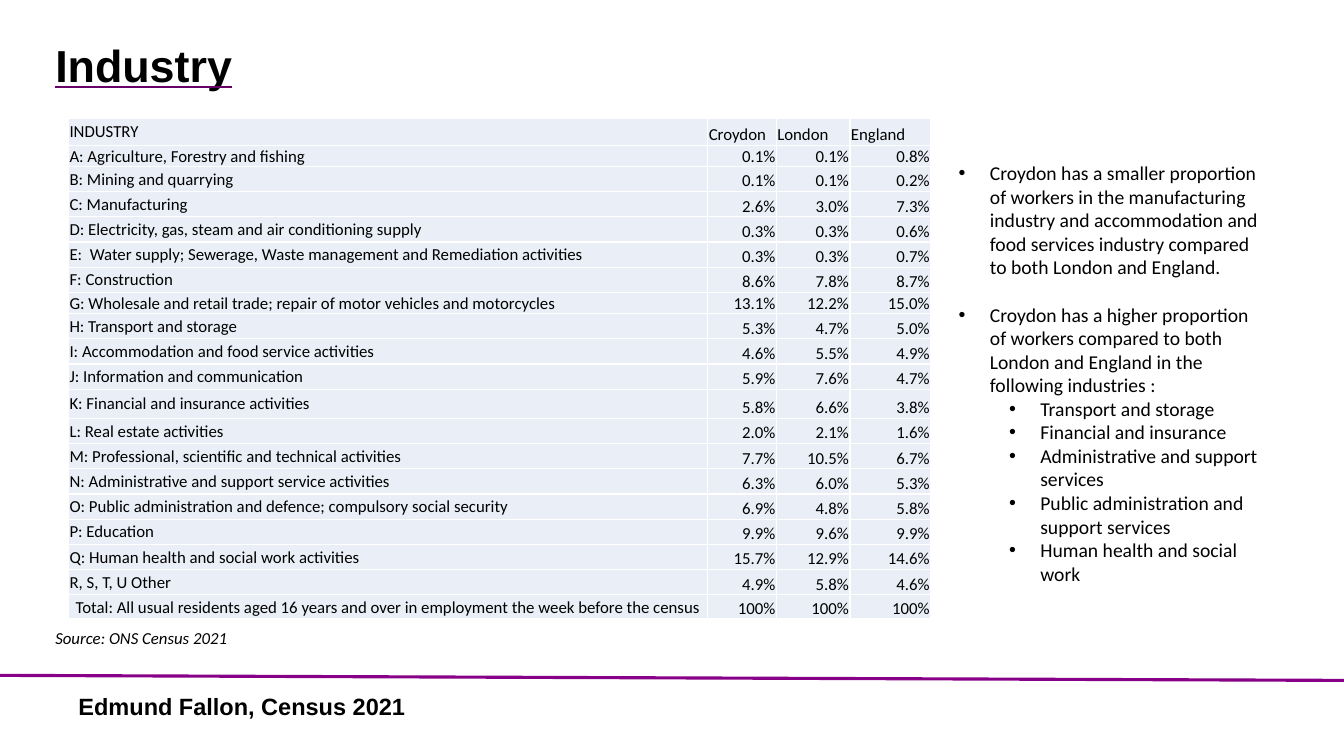
from lxml.etree import SubElement
from pptx import Presentation
from pptx.dml.color import RGBColor
from pptx.enum.shapes import MSO_CONNECTOR
from pptx.enum.text import MSO_ANCHOR as Anchor, PP_ALIGN as Align
from pptx.oxml import parse_xml
from pptx.oxml.ns import nsdecls, qn
from pptx.util import Inches, Pt

BLACK, PURPLE, UNDERLINE = "000000", "880088", "660066"
CELL_FILL, CELL_BORDER = "EAEFF7", "FFFFFF"


def rgb(value):
    return RGBColor.from_string(value)


def add_run(paragraph, text, size, font="Calibri"):
    run = paragraph.add_run()
    run.text = text
    run.font.size = Pt(size)
    run.font.name = font
    run.font.color.rgb = rgb(BLACK)
    return run


prs = Presentation()
prs.slide_width, prs.slide_height = Inches(13.33), Inches(7.5)
slide = prs.slides.add_slide(prs.slide_layouts[6])
shapes = slide.shapes

# Footer rule and text
rule = shapes.add_connector(
    MSO_CONNECTOR.STRAIGHT, Inches(0), Inches(6.7), Inches(13.33), Inches(6.75))
rule.line.color.rgb = rgb(PURPLE)
rule.line.width = Pt(2.25)
SubElement(rule._element.spPr, qn("a:effectLst"))

footer = shapes.add_textbox(Inches(0.68), Inches(6.89), Inches(3.87), Inches(0.47)).text_frame
footer.word_wrap = True
footer.paragraphs[0].line_spacing = 0.7
add_run(footer.paragraphs[0], "Edmund Fallon, Census 2021", 16.8, "Arial").font.bold = True

# Title with a purple underline
title = shapes.add_textbox(Inches(0.45), Inches(0.21), Inches(11.5), Inches(0.92)).text_frame
title.word_wrap = True
title.vertical_anchor = Anchor.MIDDLE
title.paragraphs[0].line_spacing = 0.9
heading = add_run(title.paragraphs[0], "Industry", 32, "Arial")
heading.font.bold = True
heading.font.underline = True
heading._r.rPr.find(qn("a:latin")).addprevious(parse_xml(
    f'<a:uFill {nsdecls("a")}><a:solidFill><a:srgbClr val="{UNDERLINE}"/></a:solidFill></a:uFill>'))

# Source line
source = shapes.add_textbox(Inches(0.45), Inches(6.18), Inches(2.18), Inches(0.3)).text_frame
source.word_wrap = True
add_run(source.paragraphs[0], "Source: ONS Census 2021", 12).font.italic = True

# Findings
findings = [
    (0, "Croydon has a smaller proportion of workers in the manufacturing industry and "
        "accommodation and food services industry compared to both London and England."),
    (0, "Croydon has a higher proportion of workers compared to both London and England "
        "in the following industries :"),
    (1, "Transport and storage"),
    (1, "Financial and insurance"),
    (1, "Administrative and support services"),
    (1, "Public administration and support services"),
    (1, "Human health and social work"),
]
notes = shapes.add_textbox(Inches(9.41), Inches(1.55), Inches(3.19), Inches(4.34)).text_frame
notes.word_wrap = True
for index, (level, finding) in enumerate(findings):
    paragraph = notes.paragraphs[0] if index == 0 else notes.add_paragraph()
    paragraph.level = level
    pPr = paragraph._p.get_or_add_pPr()
    pPr.set("marL", str(Inches(0.31 + 0.5 * level)))
    pPr.set("indent", str(Inches(-0.31)))
    SubElement(pPr, qn("a:buFont"), typeface="Arial")
    SubElement(pPr, qn("a:buChar"), char="•")
    if index and level == 0:
        paragraph.space_before = Pt(17)
    add_run(paragraph, finding, 14)

# Industry table
industries = [
    ("INDUSTRY", "Croydon", "London", "England"),
    ("A: Agriculture, Forestry and fishing", "0.1%", "0.1%", "0.8%"),
    ("B: Mining and quarrying", "0.1%", "0.1%", "0.2%"),
    ("C: Manufacturing", "2.6%", "3.0%", "7.3%"),
    ("D: Electricity, gas, steam and air conditioning supply", "0.3%", "0.3%", "0.6%"),
    ("E:  Water supply; Sewerage, Waste management and Remediation activities",
     "0.3%", "0.3%", "0.7%"),
    ("F: Construction", "8.6%", "7.8%", "8.7%"),
    ("G: Wholesale and retail trade; repair of motor vehicles and motorcycles",
     "13.1%", "12.2%", "15.0%"),
    ("H: Transport and storage", "5.3%", "4.7%", "5.0%"),
    ("I: Accommodation and food service activities", "4.6%", "5.5%", "4.9%"),
    ("J: Information and communication", "5.9%", "7.6%", "4.7%"),
    ("K: Financial and insurance activities", "5.8%", "6.6%", "3.8%"),
    ("L: Real estate activities", "2.0%", "2.1%", "1.6%"),
    ("M: Professional, scientific and technical activities", "7.7%", "10.5%", "6.7%"),
    ("N: Administrative and support service activities", "6.3%", "6.0%", "5.3%"),
    ("O: Public administration and defence; compulsory social security",
     "6.9%", "4.8%", "5.8%"),
    ("P: Education", "9.9%", "9.6%", "9.9%"),
    ("Q: Human health and social work activities", "15.7%", "12.9%", "14.6%"),
    ("R, S, T, U Other", "4.9%", "5.8%", "4.6%"),
    ("Total: All usual residents aged 16 years and over in employment the week before the census",
     "100%", "100%", "100%"),
]
column_widths = [6.34, 0.68, 0.73, 0.8]
special_heights = {0: 0.27, 1: 0.21, 7: 0.21, 11: 0.29, 19: 0.24}
last_row = len(industries) - 1

table = shapes.add_table(len(industries), len(column_widths), Inches(0.68), Inches(1.17),
                         Inches(8.55), Inches(4.97)).table
table.first_row = False
table.horz_banding = False
for column, width in zip(table.columns, column_widths):
    column.width = Inches(width)

for row, values in enumerate(industries):
    table.rows[row].height = Inches(special_heights.get(row, 0.25))
    for col, value in enumerate(values):
        cell = table.cell(row, col)
        cell.margin_left = cell.margin_right = cell.margin_top = Inches(0.01)
        cell.margin_bottom = 0
        cell.vertical_anchor = Anchor.BOTTOM if col else Anchor.MIDDLE
        tcPr = cell._tc.get_or_add_tcPr()
        for side in ("lnL", "lnR", "lnT", "lnB"):
            border = SubElement(tcPr, qn(f"a:{side}"), w=str(Pt(1)))
            SubElement(SubElement(border, qn("a:solidFill")), qn("a:srgbClr"), val=CELL_BORDER)
        cell.fill.solid()
        cell.fill.fore_color.rgb = rgb(CELL_FILL)
        paragraph = cell.text_frame.paragraphs[0]
        if col and row:
            paragraph.alignment = Align.RIGHT
        elif row == last_row:
            paragraph.alignment = Align.CENTER
        add_run(paragraph, value, 12)

prs.save("out.pptx")
